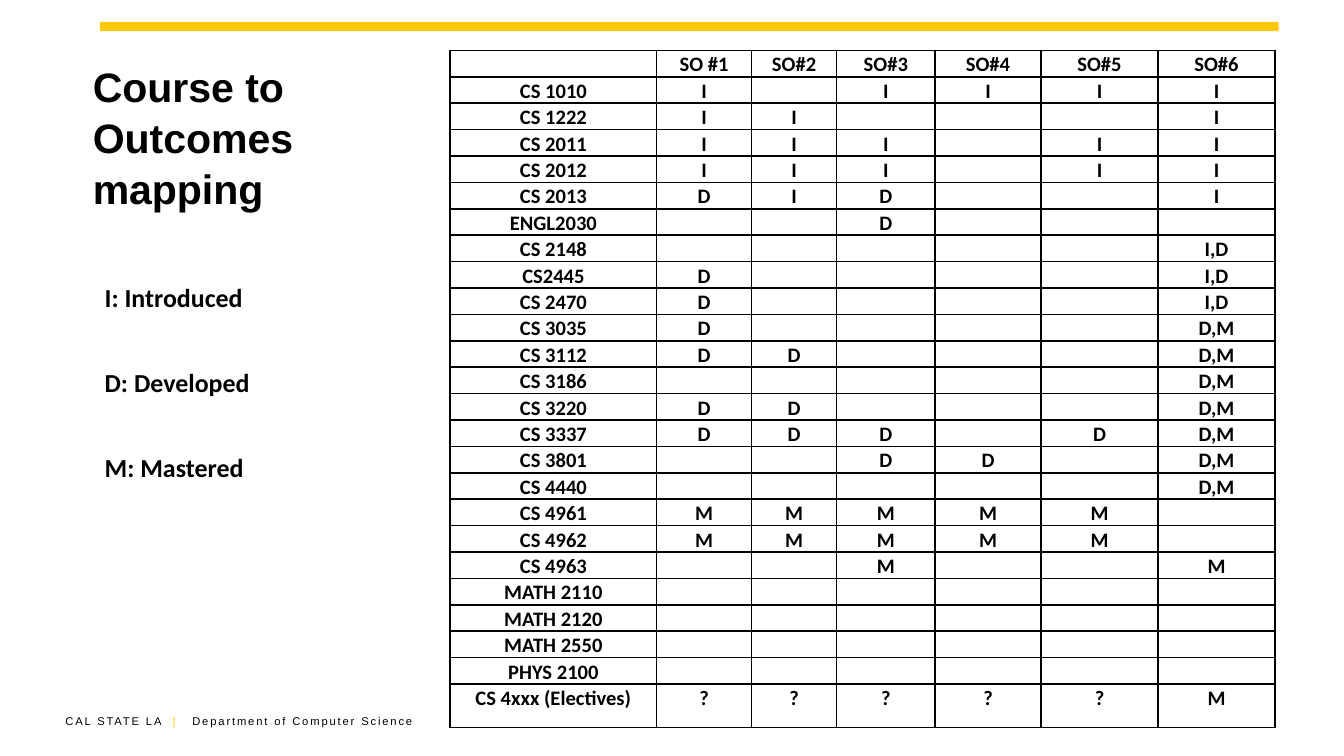
from pptx import Presentation
from pptx import util as u
from pptx.dml.color import RGBColor
from pptx.enum import shapes, text
from pptx.oxml import parse_xml
from pptx.oxml.ns import nsdecls

Pt = u.Pt
HUES = {"ink": "000000", "gold": "FCC90A", "bar": "FCC90A", "paper": "FFFFFF"}
COLS = [110.6, 50.9, 45.5, 52.8, 56.8, 62.7, 62.7]
HEAD = "|SO #1|SO#2|SO#3|SO#4|SO#5|SO#6"
ROWS = [
    "CS 1010|I||I|I|I|I",
    "CS 1222|I|I||||I",
    "CS 2011|I|I|I||I|I",
    "CS 2012|I|I|I||I|I",
    "CS 2013|D|I|D|||I",
    "ENGL2030|||D|||",
    "CS 2148||||||I,D",
    "CS2445|D|||||I,D",
    "CS 2470|D|||||I,D",
    "CS 3035|D|||||D,M",
    "CS 3112|D|D||||D,M",
    "CS 3186||||||D,M",
    "CS 3220|D|D||||D,M",
    "CS 3337|D|D|D||D|D,M",
    "CS 3801|||D|D||D,M",
    "CS 4440||||||D,M",
    "CS 4961|M|M|M|M|M|",
    "CS 4962|M|M|M|M|M|",
    "CS 4963|||M|||M",
    "MATH 2110||||||",
    "MATH 2120||||||",
    "MATH 2550||||||",
    "PHYS 2100||||||",
    "CS 4xxx (Electives)|?|?|?|?|?|M",
]
LEGEND = ["I: Introduced", "D: Developed", "M: Mastered"]


def rgb(name):
    return RGBColor.from_string(HUES[name])


def add_run(para, words, size, face="Calibri", hue="ink", bold=True, **attrs):
    """Add a run; attrs are raw run properties such as spc or baseline."""
    run = para.add_run()
    run.text = words
    font = run.font
    font.size, font.name, font.bold = Pt(size), face, bold
    font.color.rgb = rgb(hue)
    for key, value in attrs.items():
        font._element.set(key, str(value))


def add_box(slide, left, top, width, height):
    box = slide.shapes.add_textbox(Pt(left), Pt(top), Pt(width), Pt(height))
    box.text_frame.word_wrap = True
    return box.text_frame


def add_bar(slide):
    bar = slide.shapes.add_shape(
        shapes.MSO_SHAPE.RECTANGLE, Pt(53.5), Pt(11.7), Pt(631.5), Pt(5))
    bar.shadow.inherit = False
    bar.fill.solid()
    bar.fill.fore_color.rgb = rgb("bar")
    bar.line.fill.background()


def add_footer(slide):
    para = add_box(slide, 28, 379, 210, 14).paragraphs[0]
    parts = [("CAL STATE LA ", "ink", 100), (" |", "gold", 100),
             (" ", "gold", 630), ("Department of Computer Science", "ink", 100)]
    for words, hue, gap in parts:
        add_run(para, words, 6, "Arial", hue, False, spc=gap)


def set_title(slide):
    title = slide.shapes.title
    title.left, title.top = Pt(42.5), Pt(18)
    title.width, title.height = Pt(191), Pt(110)
    frame = title.text_frame
    frame.word_wrap = True
    frame.auto_size = text.MSO_AUTO_SIZE.NONE
    frame.vertical_anchor = text.MSO_ANCHOR.MIDDLE
    para = frame.paragraphs[0]
    para.alignment = text.PP_ALIGN.LEFT
    para.line_spacing = 1.04
    add_run(para, "Course to Outcomes mapping", 22, "Arial")


def add_edges(cell):
    props = cell._tc.get_or_add_tcPr()
    for side in ("lnL", "lnR", "lnT", "lnB"):
        props.append(parse_xml(
            f'<a:{side} {nsdecls("a")} w="{Pt(1)}"><a:solidFill>'
            f'<a:srgbClr val="{HUES["ink"]}"/></a:solidFill></a:{side}>'))


def fill_cell(cell, words):
    add_edges(cell)
    cell.fill.solid()
    cell.fill.fore_color.rgb = rgb("paper")
    cell.margin_left = cell.margin_right = Pt(7.7)
    cell.margin_top = cell.margin_bottom = 0
    para = cell.text_frame.paragraphs[0]
    para.alignment = text.PP_ALIGN.CENTER
    para.line_spacing = 1.07
    if words:
        add_run(para, words, 11)
    else:
        para._p.get_or_add_endParaRPr().set("sz", "1100")


def add_grid(slide):
    lines = [HEAD] + ROWS
    frame = slide.shapes.add_table(
        len(lines), len(COLS), Pt(241.2), Pt(27), Pt(sum(COLS)), Pt(362))
    grid = frame.table
    grid.first_row = grid.horz_banding = False
    for col, width in zip(grid.columns, COLS):
        col.width = Pt(width)
    for row, line in zip(grid.rows, lines):
        row.height = Pt(13)
        for cell, words in zip(row.cells, line.split("|")):
            fill_cell(cell, words)
    grid.rows[len(lines) - 1].height = Pt(23.3)


def add_legend(slide):
    frame = add_box(slide, 49, 129, 122.5, 91.5)
    for i, words in enumerate(LEGEND):
        para = frame.add_paragraph() if i else frame.paragraphs[0]
        para.line_spacing = 1.07
        para.space_before = Pt(4.5 if i else 0)
        para.space_after = Pt(6)
        add_run(para, words, 24, baseline=-25000)


def main():
    deck = Presentation()
    deck.slide_width, deck.slide_height = Pt(720), Pt(405)
    slide = deck.slides.add_slide(deck.slide_layouts[5])
    add_footer(slide)
    add_bar(slide)
    set_title(slide)
    add_grid(slide)
    add_legend(slide)
    deck.save("out.pptx")


if __name__ == "__main__":
    main()
